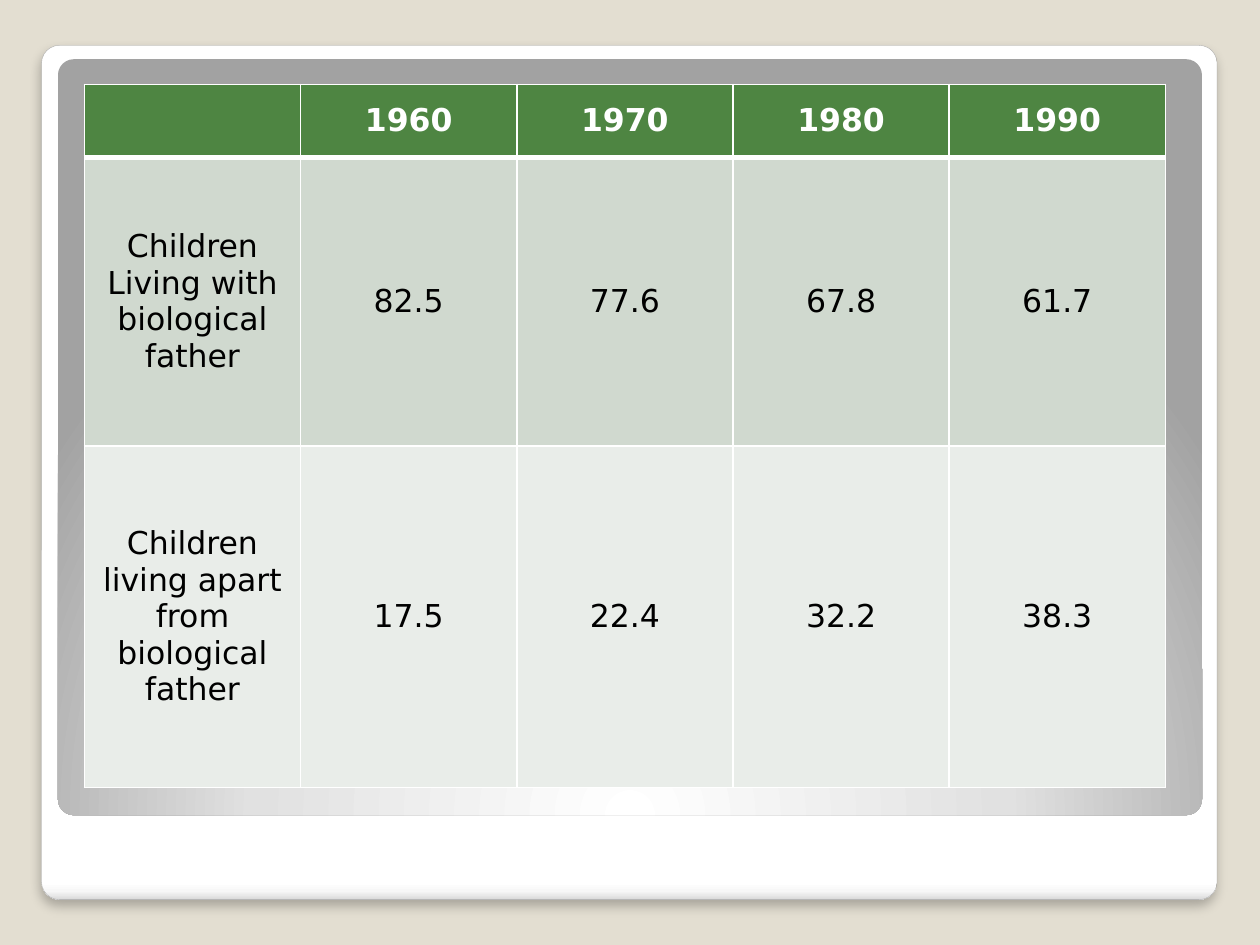
from pptx import Presentation
from pptx.dml.color import RGBColor
from pptx.enum.shapes import MSO_SHAPE
from pptx.enum.text import MSO_ANCHOR, PP_ALIGN
from pptx.oxml import parse_xml
from pptx.oxml.ns import nsdecls
from pptx.util import Inches, Pt

ROUNDED = MSO_SHAPE.ROUNDED_RECTANGLE
MIDDLE = MSO_ANCHOR.MIDDLE
CENTER = PP_ALIGN.CENTER

BACKGROUND = RGBColor(0xE3, 0xDE, 0xD1)
PANEL_EDGE = RGBColor(0xA4, 0xA4, 0xA4)
WHITE = RGBColor(0xFF, 0xFF, 0xFF)
BLACK = RGBColor(0x00, 0x00, 0x00)
GREEN = RGBColor(0x4E, 0x85, 0x42)
BAND_DARK = RGBColor(0xD0, 0xD9, 0xCF)
BAND_LIGHT = RGBColor(0xE9, 0xED, 0xE9)


def add_panel(left, top, width, height, stops, direction):
    """Add a rounded panel with a gradient of (percent, colour) stops."""
    panel = slide.shapes.add_shape(
        ROUNDED, Inches(left), Inches(top), Inches(width), Inches(height))
    panel.adjustments[0] = 0.021
    panel.shadow.inherit = False
    panel.line.fill.background()
    stop_xml = "".join(
        f'<a:gs pos="{percent * 1000}"><a:srgbClr val="{colour}"/></a:gs>'
        for percent, colour in stops)
    panel._element.spPr.prstGeom.addnext(parse_xml(
        f'<a:gradFill {nsdecls("a")} rotWithShape="1">'
        f'<a:gsLst>{stop_xml}</a:gsLst>{direction}</a:gradFill>'))
    return panel


def add_border(cell, side, points):
    """Draw one white border of a cell; call before filling the cell."""
    cell._tc.get_or_add_tcPr().append(parse_xml(
        f'<a:{side} {nsdecls("a")} w="{Pt(points)}"><a:solidFill>'
        f'<a:srgbClr val="{WHITE}"/></a:solidFill></a:{side}>'))


prs = Presentation()
prs.slide_width, prs.slide_height = Inches(10), Inches(7.5)
slide = prs.slides.add_slide(prs.slide_layouts[6])
slide.background.fill.solid()
slide.background.fill.fore_color.rgb = BACKGROUND

# White outer card with a soft shadow
card = add_panel(
    0.33, 0.36, 9.33, 6.78,
    [(0, "FFFFFF"), (98, "FFFFFF"), (99, "F7F7F7"), (100, "DADADA")],
    '<a:lin ang="5400000" scaled="0"/>')
card.line.color.rgb = PANEL_EDGE
card.line.width = Pt(0.16)
card._element.spPr.find("{*}effectLst").append(parse_xml(
    f'<a:outerShdw {nsdecls("a")} blurRad="{Pt(6)}" dist="{Pt(4)}" '
    'dir="5400000" algn="t" rotWithShape="0">'
    '<a:srgbClr val="000000"><a:alpha val="25000"/></a:srgbClr></a:outerShdw>'))

# Grey inner panel, lit from below
add_panel(
    0.46, 0.47, 9.08, 6,
    [(0, "FFFFFF"), (55, "E1E1E1"), (100, "A2A2A2")],
    '<a:path path="circle"><a:fillToRect l="50000" t="175000" '
    'r="50000" b="-75000"/></a:path>')

# Share of children living with and apart from their father
rows = [
    ["", "1960", "1970", "1980", "1990"],
    ["Children Living with biological father", "82.5", "77.6", "67.8", "61.7"],
    ["Children living apart from biological father",
     "17.5", "22.4", "32.2", "38.3"],
]
row_heights = [0.58, 2.29, 2.71]
row_fills = [GREEN, BAND_DARK, BAND_LIGHT]
column_width = 1.716

table = slide.shapes.add_table(
    len(rows), len(rows[0]), Inches(0.67), Inches(0.67),
    Inches(column_width * len(rows[0])), Inches(sum(row_heights))).table
for column in table.columns:
    column.width = Inches(column_width)

for r, (texts, height, fill) in enumerate(zip(rows, row_heights, row_fills)):
    table.rows[r].height = Inches(height)
    is_header = r == 0
    font_format = {
        "name": "DejaVu Sans", "size": Pt(18), "bold": is_header}
    for c, text in enumerate(texts):
        cell = table.cell(r, c)
        cell.text = text
        cell.vertical_anchor = MIDDLE
        borders = {"lnL": 1, "lnR": 1, "lnT": 3 if r == 1 else 1,
                   "lnB": 3 if is_header else 1}
        for side, points in borders.items():
            add_border(cell, side, points)
        cell.fill.solid()
        cell.fill.fore_color.rgb = fill
        paragraph = cell.text_frame.paragraphs[0]
        paragraph.alignment = CENTER
        for name, value in font_format.items():
            setattr(paragraph.font, name, value)
        paragraph.font.color.rgb = WHITE if is_header else BLACK
        for run in paragraph.runs:
            for name, value in font_format.items():
                setattr(run.font, name, value)
            run.font.color.rgb = WHITE if is_header else BLACK

prs.save("out.pptx")
